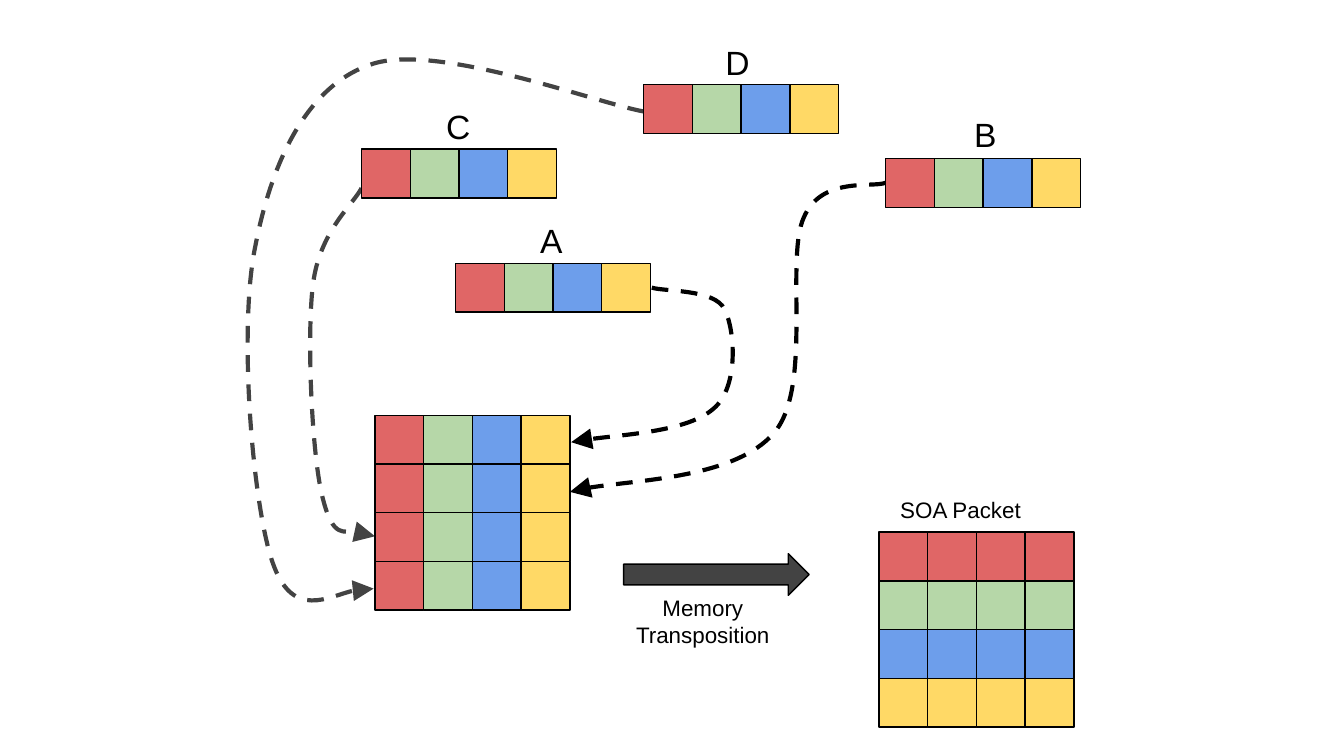
from dataclasses import dataclass

from lxml import etree
from pptx import Presentation
from pptx.dml.color import RGBColor as RGB
from pptx.enum.dml import MSO_LINE as Dash
from pptx.enum.shapes import MSO_SHAPE as Shape
from pptx.enum.text import MSO_ANCHOR as Anchor, PP_ALIGN as Align
from pptx.oxml.ns import qn
from pptx.util import Inches, Pt


@dataclass(frozen=True)
class Theme:
    black: RGB = RGB(0x00, 0x00, 0x00)
    dark: RGB = RGB(0x43, 0x43, 0x43)
    fields: tuple = tuple(map(RGB.from_string, ("E06666", "B6D7A8", "6D9EEB", "FFD966")))
    font: str = "Arial"
    letter: Pt = Pt(18)
    caption: Pt = Pt(12)
    thin: Pt = Pt(0.75)
    thick: Pt = Pt(2.25)


T = Theme()
SIDE = 1.45  # four cells


def add_solid(s, kind, box, color):
    sp = s.shapes.add_shape(kind, *map(Inches, box))
    sp.shadow.inherit = False
    sp.fill.solid()
    sp.fill.fore_color.rgb = color
    sp.line.color.rgb = T.black
    sp.line.width = T.thin
    return sp


def add_label(s, box, text, size, align=Align.LEFT):
    tf = s.shapes.add_textbox(*map(Inches, box)).text_frame
    frame = dict(word_wrap=True, vertical_anchor=Anchor.TOP)
    frame.update((f"margin_{side}", Inches(0.1)) for side in ("left", "top", "right", "bottom"))
    for name, value in frame.items():
        setattr(tf, name, value)
    p = tf.paragraphs[0]
    p.alignment = align
    r = p.add_run()
    r.text = text
    for name, value in dict(name=T.font, size=size).items():
        setattr(r.font, name, value)
    r.font.color.rgb = T.black


def add_grid(s, box, rows):
    """Fill the box with one cell for each colour in rows."""
    x, y, w, h = box
    cell_h = h / len(rows)
    for i, row in enumerate(rows):
        cell_w = w / len(row)
        for j, color in enumerate(row):
            add_solid(s, Shape.RECTANGLE, (x + j * cell_w, y + i * cell_h, cell_w, cell_h), color)


def add_record(s, box, letter, label_box):
    """One record of four fields; label_box is relative to the record."""
    add_grid(s, box, [T.fields])
    dx, dy, w, h = label_box
    add_label(s, (box[0] + dx, box[1] + dy, w, h), letter, T.letter)


def add_curve(s, box, color, start, *segments):
    """Dashed Bezier arrow; each segment has two controls and an end point."""
    x, y, w, h = box
    builder = s.shapes.build_freeform(Inches(x), Inches(y))
    builder.add_line_segments([(Inches(x + w), Inches(y + h))], close=False)
    sp = builder.convert_to_shape()
    sp.shadow.inherit = False
    sp.fill.background()
    sp.line.color.rgb = color
    sp.line.width = T.thick
    sp.line.dash_style = Dash.DASH
    ln = next(sp.element.iter(qn("a:ln")))
    etree.SubElement(ln, qn("a:tailEnd"), type="triangle", w="lg", len="lg")

    # Bezier outline in place of the box diagonal
    outline = next(sp.element.iter(qn("a:path")))
    for child in list(outline):
        outline.remove(child)
    outline.set("fill", "none")
    for tag, points in [("a:moveTo", start), *(("a:cubicBezTo", seg) for seg in segments)]:
        step = etree.SubElement(outline, qn(tag))
        for px, py in zip(points[::2], points[1::2]):
            etree.SubElement(step, qn("a:pt"), x=str(Inches(px - x)), y=str(Inches(py - y)))


def add_transposition(s, box):
    """Block arrow with its caption below."""
    x, y, w, h = box
    add_solid(s, Shape.RIGHT_ARROW, box, T.dark)
    add_label(s, (x - 0.16, y + 0.2, 1.5, 0.56), "Memory Transposition", T.caption, Align.CENTER)


def add_packet(s, box):
    """Transposed grid: one field in each row."""
    x, y, w, h = box
    add_label(s, (x + 0.06, y - 0.37, 1.56, 0.27), "SOA Packet", T.caption)
    add_grid(s, box, [[color] * 4 for color in T.fields])


def main():
    prs = Presentation()
    prs.slide_width = Inches(10)
    prs.slide_height = prs.slide_width * 9 // 16
    s = prs.slides.add_slide(prs.slide_layouts[6])

    # Arrows from records D, C, A and B to the gathered rows
    add_curve(s, (1.84, 0.44, 2.95, 4), T.dark, (4.79, 0.83),
              (4.45, 0.77, 3.24, 0.31, 2.76, 0.48),
              (2.28, 0.64, 2.02, 1.21, 1.9, 1.83),
              (1.77, 2.45, 1.88, 3.77, 2.03, 4.19),
              (2.18, 4.62, 2.66, 4.34, 2.78, 4.38))
    add_curve(s, (2.31, 1.4, 0.48, 2.59), T.dark, (2.69, 1.4),
              (2.63, 1.52, 2.38, 1.72, 2.33, 2.11),
              (2.28, 2.49, 2.32, 3.39, 2.4, 3.7),
              (2.48, 4.02, 2.72, 3.94, 2.79, 3.99))
    add_curve(s, (4.25, 2.14, 1.21, 1.15), T.black, (4.85, 2.14),
              (4.94, 2.17, 5.32, 2.15, 5.39, 2.3),
              (5.47, 2.45, 5.5, 2.88, 5.31, 3.04),
              (5.12, 3.21, 4.42, 3.25, 4.25, 3.29))
    add_curve(s, (4.24, 1.36, 2.35, 2.29), T.black, (6.59, 1.36),
              (6.49, 1.4, 6.11, 1.31, 5.98, 1.62),
              (5.84, 1.93, 6.05, 2.88, 5.76, 3.22),
              (5.47, 3.56, 4.49, 3.58, 4.24, 3.66))

    # Gathered rows, transposition, packet
    add_grid(s, (2.79, 3.09, SIDE, SIDE), [T.fields] * 4)
    add_transposition(s, (4.64, 4.12, 1.38, 0.31))
    add_packet(s, (6.54, 3.96, SIDE, SIDE))

    # Scattered records
    for letter, x, y, label_box in (
        ("C", 2.69, 1.11, (0.53, -0.42, 0.29, 0.42)),
        ("A", 3.39, 1.96, (0.53, -0.42, 0.41, 0.36)),
        ("D", 4.79, 0.63, (0.51, -0.42, 0.24, 0.23)),
        ("B", 6.59, 1.18, (0.56, -0.43, 0.45, 0.31)),
    ):
        add_record(s, (x, y, SIDE, SIDE / 4), letter, label_box)

    prs.save("out.pptx")


if __name__ == "__main__":
    main()
